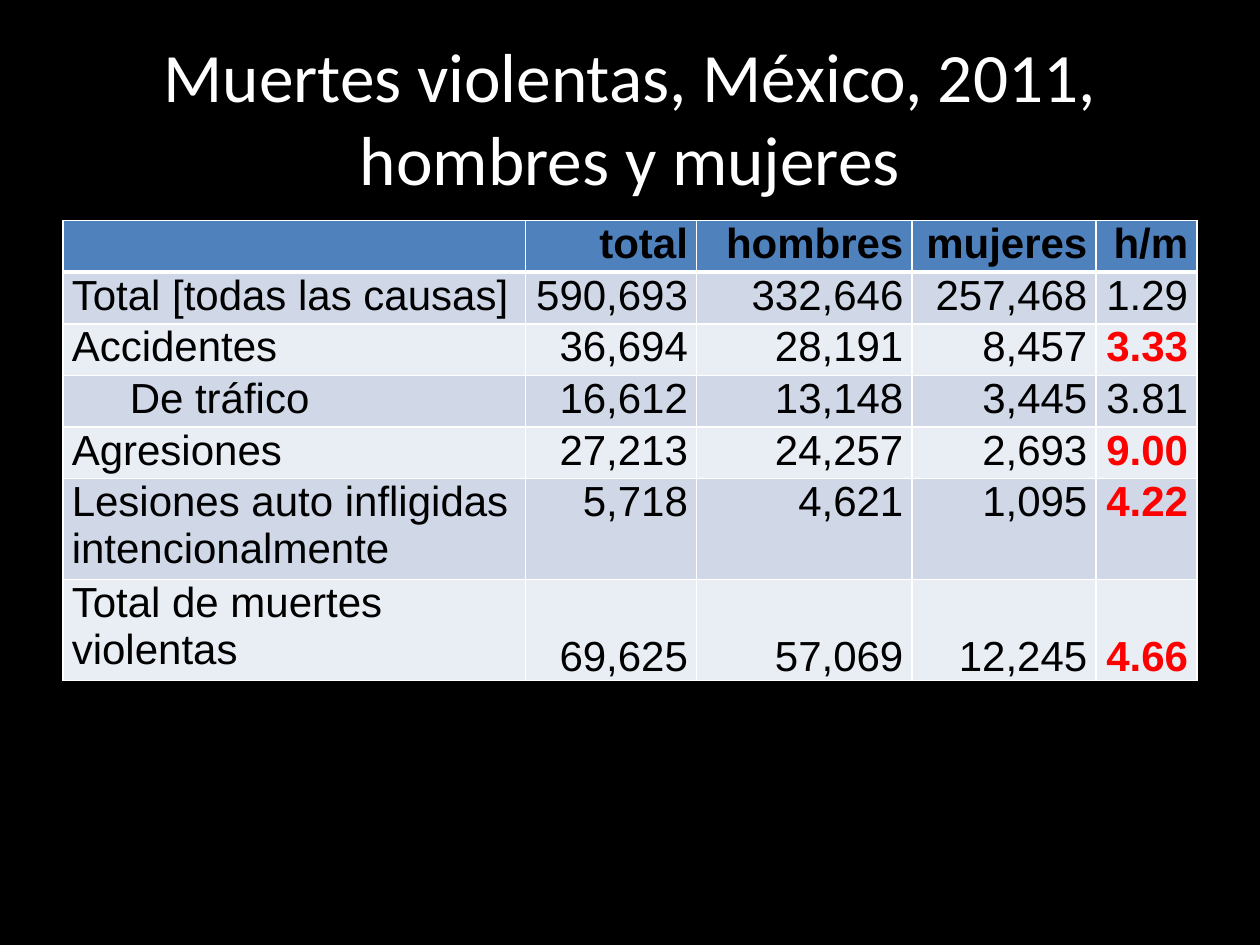
"""Build the slide on violent deaths in Mexico, 2011, by sex."""
from lxml import etree
from pptx import Presentation
from pptx.dml.color import RGBColor
from pptx.enum.text import MSO_ANCHOR, PP_ALIGN
from pptx.oxml.ns import qn
from pptx.util import Inches, Pt

LEFT, CENTER, RIGHT = PP_ALIGN.LEFT, PP_ALIGN.CENTER, PP_ALIGN.RIGHT
TOP, MIDDLE, BOTTOM = MSO_ANCHOR.TOP, MSO_ANCHOR.MIDDLE, MSO_ANCHOR.BOTTOM
COLORS = {
    "black": "000000",
    "white": "FFFFFF",
    "head": "4F81BD",
    "odd": "D0D8E8",
    "even": "E9EDF4",
    "red": "FF0000",
}
WIDTHS = [3.67, 1.36, 1.71, 1.46, 0.8]
ROWS = [
    ["", "total", "hombres", "mujeres", "h/m"],
    ["Total [todas las causas]", "590,693", "332,646", "257,468", "1.29"],
    ["Accidentes", "36,694", "28,191", "8,457", "3.33"],
    ["De tráfico", "16,612", "13,148", "3,445", "3.81"],
    ["Agresiones", "27,213", "24,257", "2,693", "9.00"],
    ["Lesiones auto infligidas intencionalmente", "5,718", "4,621", "1,095", "4.22"],
    ["Total de muertes violentas", "69,625", "57,069", "12,245", "4.66"],
]
HEIGHTS = [0.41] * 5 + [0.75] * 2
RED_ROWS = {2, 4, 5, 6}
SUB_ROW = 3


def style(para, face, size, color, align, bold=False):
    para.alignment = align
    font = para.font
    for run in para.runs:
        font = run.font
        font.name = face
        font.bold = bold
        font.color.rgb = RGBColor.from_string(COLORS[color])
        font.size = Pt(size)
    font.size = Pt(size)


def border(cell, side, width):
    props = cell._tc.get_or_add_tcPr()
    line = etree.SubElement(props, qn(f"a:ln{side}"), w=str(Pt(width)))
    fill = etree.SubElement(line, qn("a:solidFill"))
    etree.SubElement(fill, qn("a:srgbClr"), val=COLORS["white"])


prs = Presentation()
prs.slide_width, prs.slide_height = Inches(10), Inches(7.5)
slide = prs.slides.add_slide(prs.slide_layouts[6])
back = slide.background.fill
back.solid()
back.fore_color.rgb = RGBColor.from_string(COLORS["black"])

title = slide.shapes.add_textbox(Inches(0.5), Inches(0.3), Inches(9), Inches(1.25))
frame = title.text_frame
frame.word_wrap = True
frame.vertical_anchor = MIDDLE
frame.text = "Muertes violentas, México, 2011,\vhombres y mujeres"
style(frame.paragraphs[0], "Calibri", 39.6, "white", CENTER)

table = slide.shapes.add_table(
    len(ROWS), len(WIDTHS), Inches(0.5), Inches(1.75), Inches(9), Inches(sum(HEIGHTS))
).table
for col, width in zip(table.columns, WIDTHS):
    col.width = Inches(width)

for r, row in enumerate(ROWS):
    table.rows[r].height = Inches(HEIGHTS[r])
    for c, text in enumerate(row):
        cell = table.cell(r, c)
        cell.text = text
        cell.margin_left = Inches(0.53 if (r, c) == (SUB_ROW, 0) else 0.07)
        cell.margin_right = Inches(0.07)
        cell.margin_top = cell.margin_bottom = 0
        last = r == len(ROWS) - 1
        cell.vertical_anchor = BOTTOM if last and c else TOP
        red = r in RED_ROWS and c == 4
        style(cell.text_frame.paragraphs[0], "Arial", 24, "red" if red else "black",
              RIGHT if c else LEFT, red or r == 0)
        for side in "LRTB":
            thick = (r, side) in ((0, "B"), (1, "T"))
            border(cell, side, 3 if thick else 1)
        cell.fill.solid()
        band = "head" if r == 0 else "odd" if r % 2 else "even"
        cell.fill.fore_color.rgb = RGBColor.from_string(COLORS[band])

prs.save("out.pptx")
